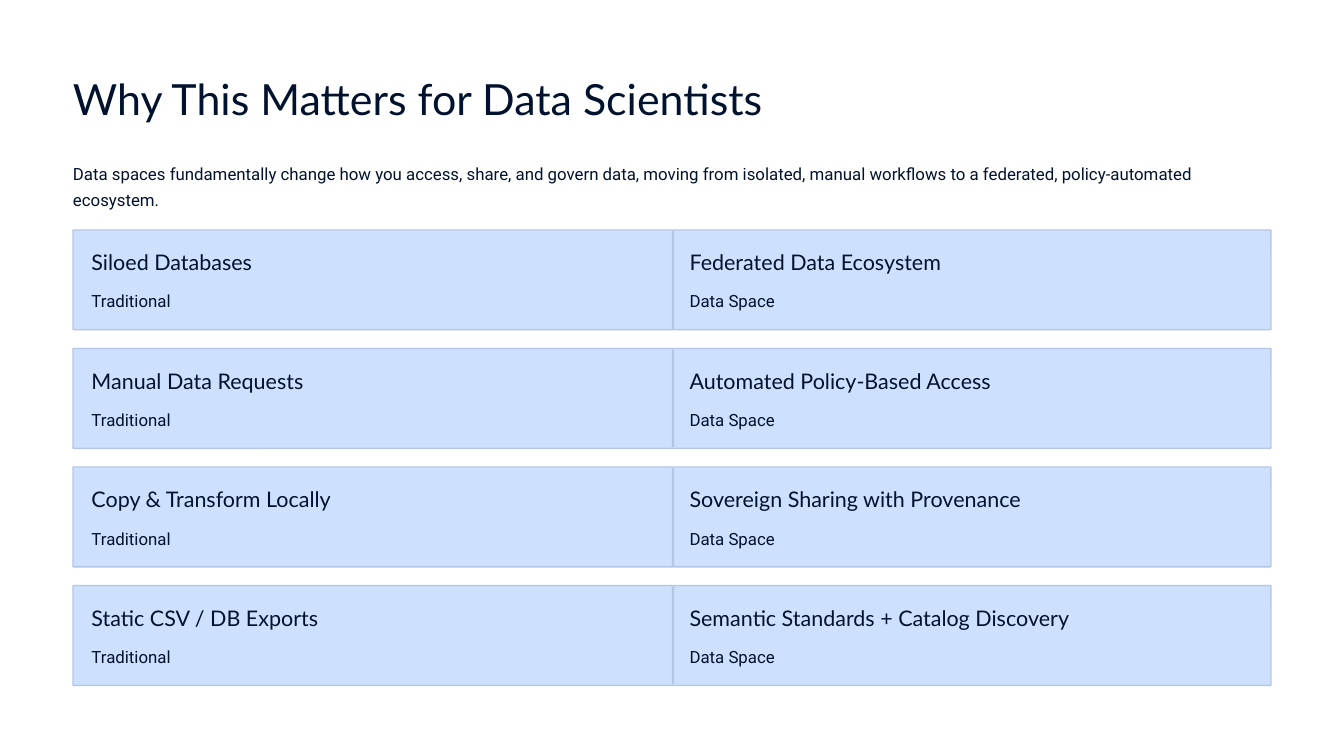
from pptx import Presentation
from pptx.dml.color import RGBColor
from pptx.enum.shapes import MSO_SHAPE
from pptx.util import Pt

RECT = MSO_SHAPE.RECTANGLE
ROUNDED = MSO_SHAPE.ROUNDED_RECTANGLE

COLORS = {"page": "FFFFFF", "ink": "01122E", "panel": "CDE0FE", "edge": "B3C6E4"}
HEADING_FONT, BODY_FONT = "Lato", "Roboto"

LEFT, CONTENT_WIDTH = 39.1, 641.8
FIRST_ROW_TOP, ROW_PITCH, ROW_HEIGHT = 123.2, 63.5, 53.5
BORDER = 0.5
HALF_WIDTH = CONTENT_WIDTH / 2 - BORDER
MIDDLE = LEFT + CONTENT_WIDTH / 2
PADDING = 9.4

# Each side: heading, heading width
COMPARISONS = [
    (("Siloed Databases", 116), ("Federated Data Ecosystem", 146)),
    (("Manual Data Requests", 123), ("Automated Policy-Based Access", 177)),
    (("Copy & Transform Locally", 136), ("Sovereign Sharing with Provenance", 190)),
    (("Static CSV / DB Exports", 131), ("Semantic Standards + Catalog Discovery", 220)),
]


def color(name):
    return RGBColor.from_string(COLORS[name])


def add_text(slide, left, top, width, height, text, font, size, spacing, wrap=False):
    frame = slide.shapes.add_textbox(Pt(left), Pt(top), Pt(width), Pt(height)).text_frame
    frame.margin_left = frame.margin_top = frame.margin_right = frame.margin_bottom = 0
    frame.word_wrap = wrap
    paragraph = frame.paragraphs[0]
    paragraph.line_spacing = spacing
    run = paragraph.add_run()
    run.text = text
    run.font.name = font
    run.font.size = Pt(size)
    run.font.color.rgb = color("ink")


def add_panel(slide, kind, left, top, width, height, fill, rounding=None, edge=None):
    panel = slide.shapes.add_shape(kind, Pt(left), Pt(top), Pt(width), Pt(height))
    panel.shadow.inherit = False
    panel.fill.solid()
    panel.fill.fore_color.rgb = color(fill)
    if rounding is not None:
        panel.adjustments[0] = rounding
    if edge:
        panel.line.color.rgb = color(edge)
        panel.line.width = Pt(0.75)
    else:
        panel.line.fill.background()


def add_side(slide, left, top, heading, heading_width, label):
    add_text(slide, left, top + 9.9, heading_width, 14.4, heading, HEADING_FONT, 11.5, 1.04)
    add_text(slide, left, top + 29.6, 301.7, 14.4, label, BODY_FONT, 9, 1.3)


def add_comparison(slide, top, traditional, data_space):
    """Draw one bordered row with its two halves and the divider."""
    inner_top, inner_height = top + BORDER, ROW_HEIGHT - 2 * BORDER
    add_panel(slide, ROUNDED, LEFT, top, CONTENT_WIDTH, ROW_HEIGHT, "panel", 0.008, "edge")
    add_panel(slide, ROUNDED, LEFT + BORDER, inner_top, HALF_WIDTH, inner_height, "panel", 0.009)
    add_side(slide, LEFT + BORDER + PADDING, top, *traditional, "Traditional")
    add_panel(slide, RECT, MIDDLE, inner_top, HALF_WIDTH, inner_height, "panel")
    add_panel(slide, ROUNDED, MIDDLE, inner_top, 1.2, inner_height, "edge", 0.4)
    add_side(slide, MIDDLE + PADDING, top, *data_space, "Data Space")


def main():
    deck = Presentation()
    deck.slide_width, deck.slide_height = Pt(720), Pt(405)
    slide = deck.slides.add_slide(deck.slide_layouts[6])
    slide.background.fill.solid()
    slide.background.fill.fore_color.rgb = color("page")

    add_text(slide, LEFT, 37.7, 437, 29, "Why This Matters for Data Scientists",
             HEADING_FONT, 23, 1.04)
    add_text(slide, LEFT, 84.3, CONTENT_WIDTH, 28.8,
             "Data spaces fundamentally change how you access, share, and govern data, "
             "moving from isolated, manual workflows to a federated, policy-automated ecosystem.",
             BODY_FONT, 9, 1.3, wrap=True)
    for row, (traditional, data_space) in enumerate(COMPARISONS):
        add_comparison(slide, FIRST_ROW_TOP + row * ROW_PITCH, traditional, data_space)
    deck.save("out.pptx")


if __name__ == "__main__":
    main()
